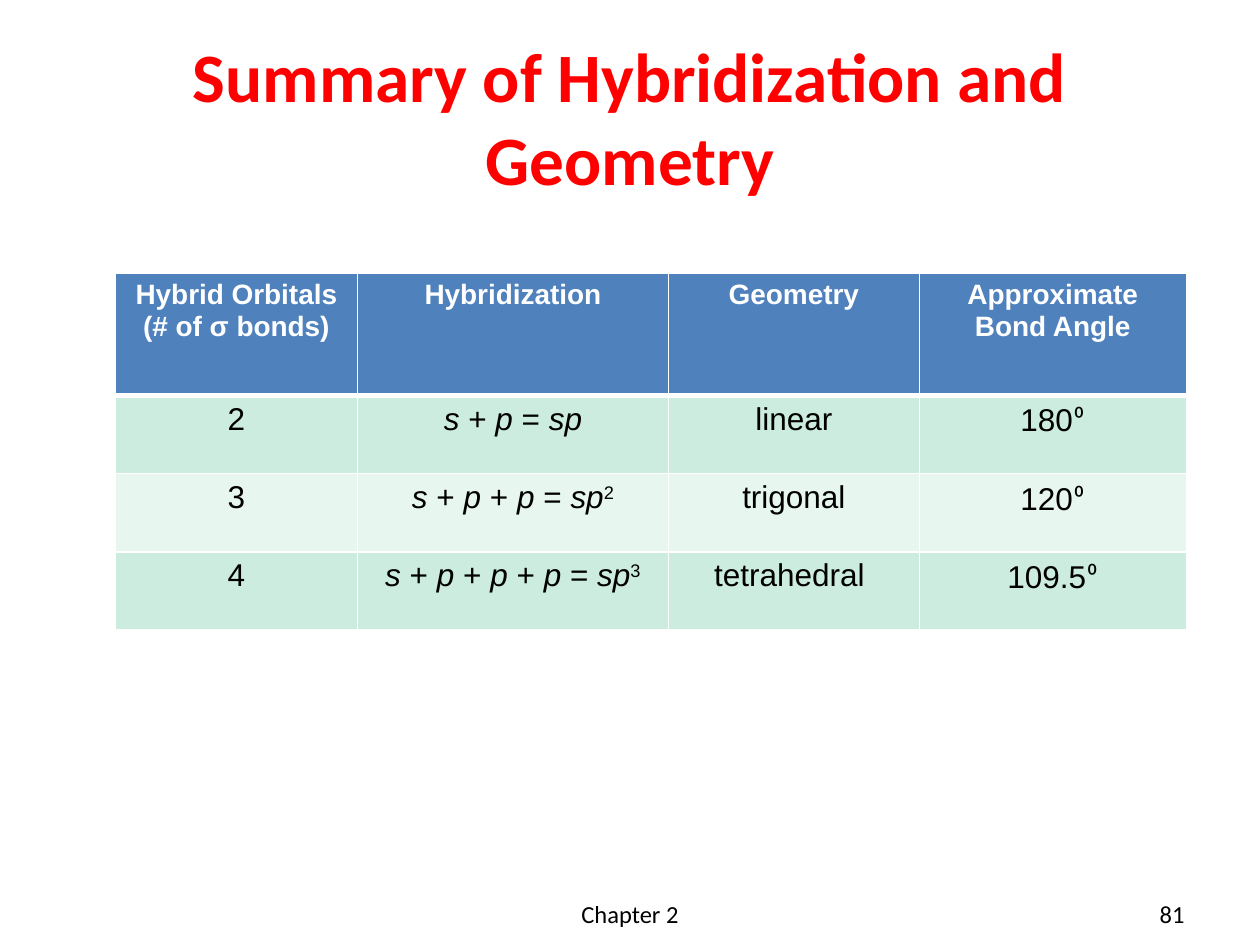
import lxml.etree
import pptx
import pptx.dml.color
import pptx.enum.text
import pptx.oxml.ns
import pptx.util

Pt = pptx.util.Pt
RGBColor = pptx.dml.color.RGBColor
PP_ALIGN = pptx.enum.text.PP_ALIGN
ANCHOR = pptx.enum.text.MSO_ANCHOR
qn = pptx.oxml.ns.qn

RED = RGBColor(0xFF, 0x00, 0x00)
BLACK = RGBColor(0x00, 0x00, 0x00)
WHITE = RGBColor(0xFF, 0xFF, 0xFF)
BLUE = RGBColor(0x4F, 0x81, 0xBD)
GREEN = RGBColor(0xCB, 0xEC, 0xDE)
PALE_GREEN = RGBColor(0xE7, 0xF6, 0xEF)


def add_run(paragraph, text, size, color, font="Arial", bold=False, italic=False):
    run = paragraph.add_run()
    run.text = text
    run.font.size = Pt(size)
    run.font.name = font
    run.font.bold = bold
    run.font.italic = italic
    run.font.color.rgb = color
    return run


def add_border(cell, side, width):
    line = lxml.etree.SubElement(cell._tc.get_or_add_tcPr(), qn(f"a:ln{side}"), w=str(Pt(width)))
    fill = lxml.etree.SubElement(line, qn("a:solidFill"))
    lxml.etree.SubElement(fill, qn("a:srgbClr"), val=str(WHITE))


presentation = pptx.Presentation()
presentation.slide_width = Pt(720)
presentation.slide_height = Pt(540)
slide = presentation.slides.add_slide(presentation.slide_layouts[6])

labels = [
    ("Summary of Hybridization and Geometry", (36, 21.6, 648, 90), 39.6, RED, True, PP_ALIGN.CENTER, ANCHOR.MIDDLE),
    ("Chapter 2", (246, 510, 228, 37.5), 14, BLACK, False, PP_ALIGN.CENTER, ANCHOR.TOP),
    ("81", (516, 510, 168, 37.5), 14, BLACK, False, PP_ALIGN.RIGHT, ANCHOR.TOP),
]
for text, place, size, color, bold, alignment, anchor in labels:
    frame = slide.shapes.add_textbox(*map(Pt, place)).text_frame
    frame.word_wrap = True
    frame.vertical_anchor = anchor
    frame.paragraphs[0].alignment = alignment
    add_run(frame.paragraphs[0], text, size, color, "Calibri", bold)

column_widths = [138.24, 177.84, 143.28, 152.64]
row_heights = [69.84, 44.64, 44.64, 44.64]
summary = slide.shapes.add_table(
    4, 4, Pt(66), Pt(156.24), Pt(sum(column_widths)), Pt(sum(row_heights))
).table
for column, width in zip(summary.columns, column_widths):
    column.width = Pt(width)
for row, height in zip(summary.rows, row_heights):
    row.height = Pt(height)

row_fills = [BLUE, GREEN, PALE_GREEN, GREEN]
for row_index, fill in enumerate(row_fills):
    for cell in summary.rows[row_index].cells:
        add_border(cell, "L", 1)
        add_border(cell, "R", 1)
        add_border(cell, "T", 3 if row_index == 1 else 1)
        add_border(cell, "B", 3 if row_index == 0 else 1)
        cell.fill.solid()
        cell.fill.fore_color.rgb = fill
        cell.text_frame.paragraphs[0].alignment = PP_ALIGN.CENTER

headings = [
    ["Hybrid Orbitals", "(# of σ bonds)"],
    ["Hybridization"],
    ["Geometry"],
    ["Approximate Bond Angle"],
]
for column_index, heading_lines in enumerate(headings):
    frame = summary.cell(0, column_index).text_frame
    for line_index, heading in enumerate(heading_lines):
        paragraph = frame.add_paragraph() if line_index else frame.paragraphs[0]
        paragraph.alignment = PP_ALIGN.CENTER
        add_run(paragraph, heading, 16, WHITE, bold=True)

geometries = [("linear", "180"), ("trigonal", "120"), ("tetrahedral ", "109.5")]
for p_count, (geometry, angle) in enumerate(geometries, start=1):
    orbitals, hybridization, shape_name, bond_angle = [
        cell.text_frame.paragraphs[0] for cell in summary.rows[p_count].cells
    ]
    add_run(orbitals, str(p_count + 1), 18, BLACK)

    add_run(hybridization, "s", 18, BLACK, italic=True)
    for _ in range(p_count):
        add_run(hybridization, " + ", 18, BLACK)
        add_run(hybridization, "p", 18, BLACK, italic=True)
    add_run(hybridization, " = ", 18, BLACK)
    add_run(hybridization, "sp", 18, BLACK, italic=True)
    if p_count > 1:
        exponent = add_run(hybridization, str(p_count), 18, BLACK)
        exponent._r.get_or_add_rPr().set("baseline", "30000")

    add_run(shape_name, geometry, 18, BLACK)
    add_run(bond_angle, angle, 18, BLACK)
    add_run(bond_angle, "⁰", 18, BLACK, "Calibri")

presentation.save("out.pptx")
